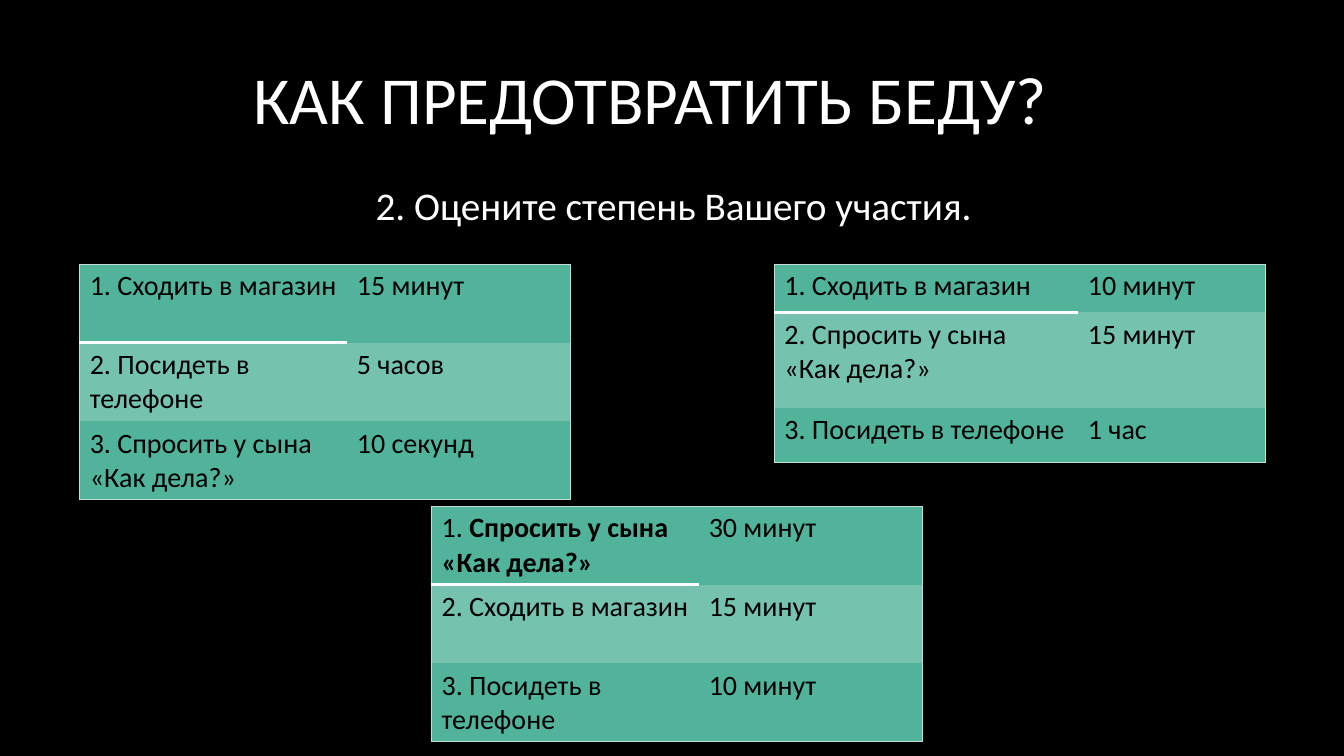
"""Build the slide with three priority tables on a black background."""
from lxml import etree
from pptx import Presentation
from pptx.dml.color import RGBColor
from pptx.enum.text import MSO_ANCHOR, PP_ALIGN
from pptx.oxml.ns import qn
from pptx.util import Inches, Pt

CENTER = PP_ALIGN.CENTER
MIDDLE = MSO_ANCHOR.MIDDLE
BLACK = RGBColor(0x00, 0x00, 0x00)
WHITE = RGBColor(0xFF, 0xFF, 0xFF)
GREEN = RGBColor(0x52, 0xB3, 0x9B)
LIGHT_GREEN = RGBColor(0x75, 0xC2, 0xAF)
FRAME = RGBColor(0xC1, 0xDD, 0xD4)
PLAIN_STYLE = "{2D5ABB26-0587-4C30-8999-92F81FD0307C}"
FONT = "Calibri"


def add_span(para, text, size, color, bold=False):
    span = para.add_run()
    span.text = text
    span.font.name = FONT
    span.font.size = Pt(size)
    span.font.bold = bold
    span.font.color.rgb = color


def add_border(cell, side, color, width):
    properties = cell._tc.get_or_add_tcPr()
    line = etree.SubElement(properties, qn(f"a:ln{side}"), w=str(Pt(width)))
    fill = etree.SubElement(line, qn("a:solidFill"))
    etree.SubElement(fill, qn("a:srgbClr"), val=str(color))


deck = Presentation()
deck.slide_width = Inches(13.33)
deck.slide_height = Inches(7.5)
page = deck.slides.add_slide(deck.slide_layouts[6])
page.background.fill.solid()
page.background.fill.fore_color.rgb = BLACK

headings = [
    ("КАК ПРЕДОТВРАТИТЬ БЕДУ?", 48, 0.91, 0.17, 11.08, 1.59),
    ("2. Оцените степень Вашего участия.", 28, 0.38, 1.73, 12.6, 0.6),
]
for text, size, left, top, width, height in headings:
    box = page.shapes.add_textbox(Inches(left), Inches(top), Inches(width), Inches(height))
    box.text_frame.word_wrap = True
    box.text_frame.vertical_anchor = MIDDLE
    para = box.text_frame.paragraphs[0]
    para.alignment = CENTER
    add_span(para, text, size, WHITE)

SHOP = "Сходить в магазин"
PHONE = "Посидеть в телефоне"
SON = "Спросить у сына «Как дела?»"
priorities = [
    (0.79, 2.62, (2.65, 2.22), (0.78, 0.78, 0.78),
     [(SHOP, "15 минут"), (PHONE, "5 часов"), (SON, "10 секунд")], False),
    (7.68, 2.62, (3.01, 1.86), (0.48, 0.95, 0.54),
     [(SHOP, "10 минут"), (SON, "15 минут"), (PHONE, "1 час")], False),
    (4.28, 5.02, (2.65, 2.22), (0.78, 0.78, 0.78),
     [(SON, "30 минут"), (SHOP, "15 минут"), (PHONE, "10 минут")], True),
]
for left, top, widths, heights, tasks, bold_first in priorities:
    frame = page.shapes.add_table(3, 2, Inches(left), Inches(top),
                                  Inches(sum(widths)), Inches(sum(heights)))
    table = frame.table
    table.first_row = False
    table.horz_banding = False
    table._tbl.tblPr.find(qn("a:tableStyleId")).text = PLAIN_STYLE
    for column, width in zip(table.columns, widths):
        column.width = Inches(width)
    for row, (task, duration) in enumerate(tasks):
        table.rows[row].height = Inches(heights[row])
        task_cell, time_cell = table.cell(row, 0), table.cell(row, 1)
        para = task_cell.text_frame.paragraphs[0]
        add_span(para, f"{row + 1}. ", 20, BLACK)
        add_span(para, task, 20, BLACK, bold_first and row == 0)
        add_span(time_cell.text_frame.paragraphs[0], duration, 20, BLACK)
        for cell, side in ((task_cell, "L"), (time_cell, "R")):
            add_border(cell, side, FRAME, 0.75)
            if row == 0:
                add_border(cell, "T", FRAME, 0.75)
            if row == 0 and cell is task_cell:
                add_border(cell, "B", WHITE, 2)
            if row == 2:
                add_border(cell, "B", FRAME, 0.75)
            cell.fill.solid()
            cell.fill.fore_color.rgb = LIGHT_GREEN if row == 1 else GREEN

deck.save("out.pptx")
